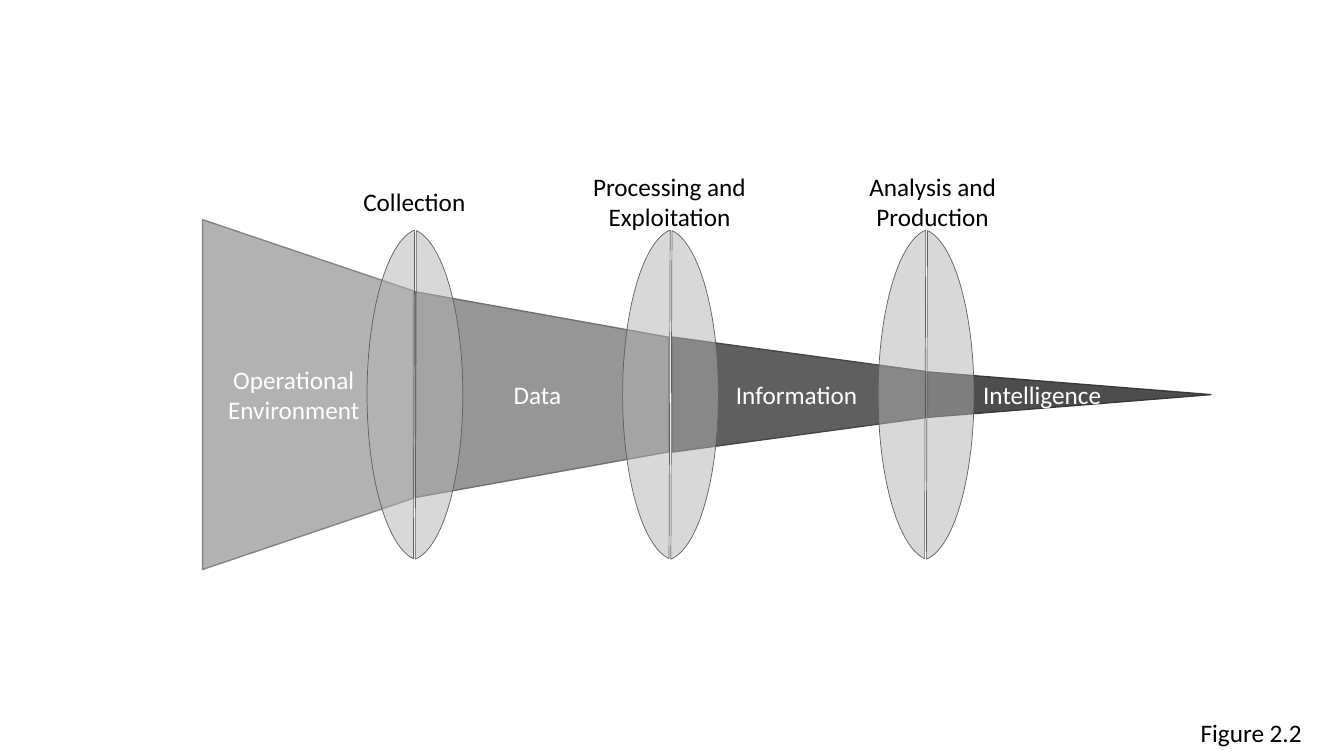
"""Build the slide showing how data is refined into intelligence."""
import pptx
import pptx.dml.color
import pptx.enum.shapes
import pptx.enum.text
import pptx.oxml.ns
import pptx.util
from lxml import etree

Inches = pptx.util.Inches
RGBColor = pptx.dml.color.RGBColor
MSO_SHAPE = pptx.enum.shapes.MSO_SHAPE
PP_ALIGN = pptx.enum.text.PP_ALIGN

WHITE = RGBColor(0xFF, 0xFF, 0xFF)
BLACK = RGBColor(0x00, 0x00, 0x00)
LIGHT_GRAY = RGBColor(0xB2, 0xB2, 0xB2)
LIGHT_EDGE = RGBColor(0x84, 0x84, 0x84)
MEDIUM_GRAY = RGBColor(0x96, 0x96, 0x96)
MEDIUM_EDGE = RGBColor(0x6F, 0x6F, 0x6F)
DARK_GRAY = RGBColor(0x5F, 0x5F, 0x5F)
DARK_EDGE = RGBColor(0x46, 0x46, 0x46)
DARKEST_GRAY = RGBColor(0x4D, 0x4D, 0x4D)
DARKEST_EDGE = RGBColor(0x39, 0x39, 0x39)

AXIS_Y = 3.915
LENS_LEFT = 3.64
LENS_PITCH = 2.535
LENS_WIDTH = 1.08
LENS_HEIGHT = 3.29
LENS_OVERLAP = 0.13

STAGES = [
    ("Operational Environment", 2.01, 2.09, 3.47, 0.338, 0, LIGHT_GRAY, LIGHT_EDGE),
    ("Data", 4.12, 2.51, 2.04, 0.221, 0.28, MEDIUM_GRAY, MEDIUM_EDGE),
    ("Information", 6.67, 2.51, 1.14, 0.299, 0.45, DARK_GRAY, DARK_EDGE),
    ("Intelligence", 9.2, 2.81, 0.45, 0.5, 0.4, DARKEST_GRAY, DARKEST_EDGE),
]
LABELS = [
    ("Collection", 2.91, 1.8, 0.4),
    ("Processing and Exploitation", 5.44, 1.65, 0.71),
    ("Analysis and Production", 8.05, 1.65, 0.71),
]


def style_shape(shape, fill, edge, edge_width):
    """Give a shape a plain fill and outline without shadow."""
    shape.shadow.inherit = False
    shape.fill.solid()
    shape.fill.fore_color.rgb = fill
    shape.line.color.rgb = edge
    shape.line.width = pptx.util.Pt(edge_width)


def write_text(shape, text, color, alignment):
    """Write one wrapped paragraph and return it."""
    shape.text_frame.word_wrap = True
    shape.text_frame.text = text
    paragraph = shape.text_frame.paragraphs[0]
    paragraph.alignment = alignment
    font = paragraph.runs[0].font
    font.name = "Calibri"
    font.size = pptx.util.Pt(18)
    font.color.rgb = color
    return paragraph


def add_stage(slide, text, left, length, height, taper, indent, fill, edge):
    """Add a trapezoid that narrows to the right, with upright text."""
    shape = slide.shapes.add_shape(
        MSO_SHAPE.TRAPEZOID,
        Inches(left + (length - height) / 2), Inches(AXIS_Y - length / 2),
        Inches(height), Inches(length))
    shape.rotation = 90
    shape.adjustments[0] = taper
    style_shape(shape, fill, edge, 1)
    paragraph = write_text(shape, text, WHITE, PP_ALIGN.CENTER)
    shape.text_frame.vertical_anchor = pptx.enum.text.MSO_ANCHOR.MIDDLE
    shape.text_frame._txBody.bodyPr.set("vert", "vert270")
    properties = paragraph._p.get_or_add_pPr()
    properties.set("marL", str(Inches(indent)))
    properties.set("indent", "0")


def add_lens(slide, left):
    """Add a translucent lens made of two facing chords."""
    lens = slide.shapes.add_group_shape()
    for half_left, rotation in ((left, 0), (left - LENS_OVERLAP, 180)):
        half = lens.shapes.add_shape(
            MSO_SHAPE.CHORD, Inches(half_left), Inches(AXIS_Y - LENS_HEIGHT / 2),
            Inches(LENS_WIDTH), Inches(LENS_HEIGHT))
        half.rotation = rotation
        half.adjustments[0] = 55.674
        half.adjustments[1] = 160.571
        style_shape(half, LIGHT_GRAY, DARK_GRAY, 0.5)
        color = half.fill._xPr.find(".//" + pptx.oxml.ns.qn("a:srgbClr"))
        etree.SubElement(color, pptx.oxml.ns.qn("a:alpha"), val="50000")


def add_label(slide, text, left, top, width, height, alignment):
    """Add a black text label."""
    label = slide.shapes.add_textbox(
        Inches(left), Inches(top), Inches(width), Inches(height))
    write_text(label, text, BLACK, alignment)
    label.text_frame.auto_size = pptx.enum.text.MSO_AUTO_SIZE.SHAPE_TO_FIT_TEXT


def main():
    """Build and save the slide."""
    presentation = pptx.Presentation()
    presentation.slide_width = Inches(13.33)
    presentation.slide_height = Inches(7.5)
    slide = presentation.slides.add_slide(presentation.slide_layouts[6])
    for stage in STAGES:
        add_stage(slide, *stage)
    for index in range(len(LABELS)):
        add_lens(slide, LENS_LEFT + index * LENS_PITCH)
    for text, left, top, height in LABELS:
        add_label(slide, text, left, top, 2.4, height, PP_ALIGN.CENTER)
    add_label(slide, "Figure 2.2", 11.81, 7.07, 1.52, 0.4, PP_ALIGN.LEFT)
    presentation.save("out.pptx")


if __name__ == "__main__":
    main()
